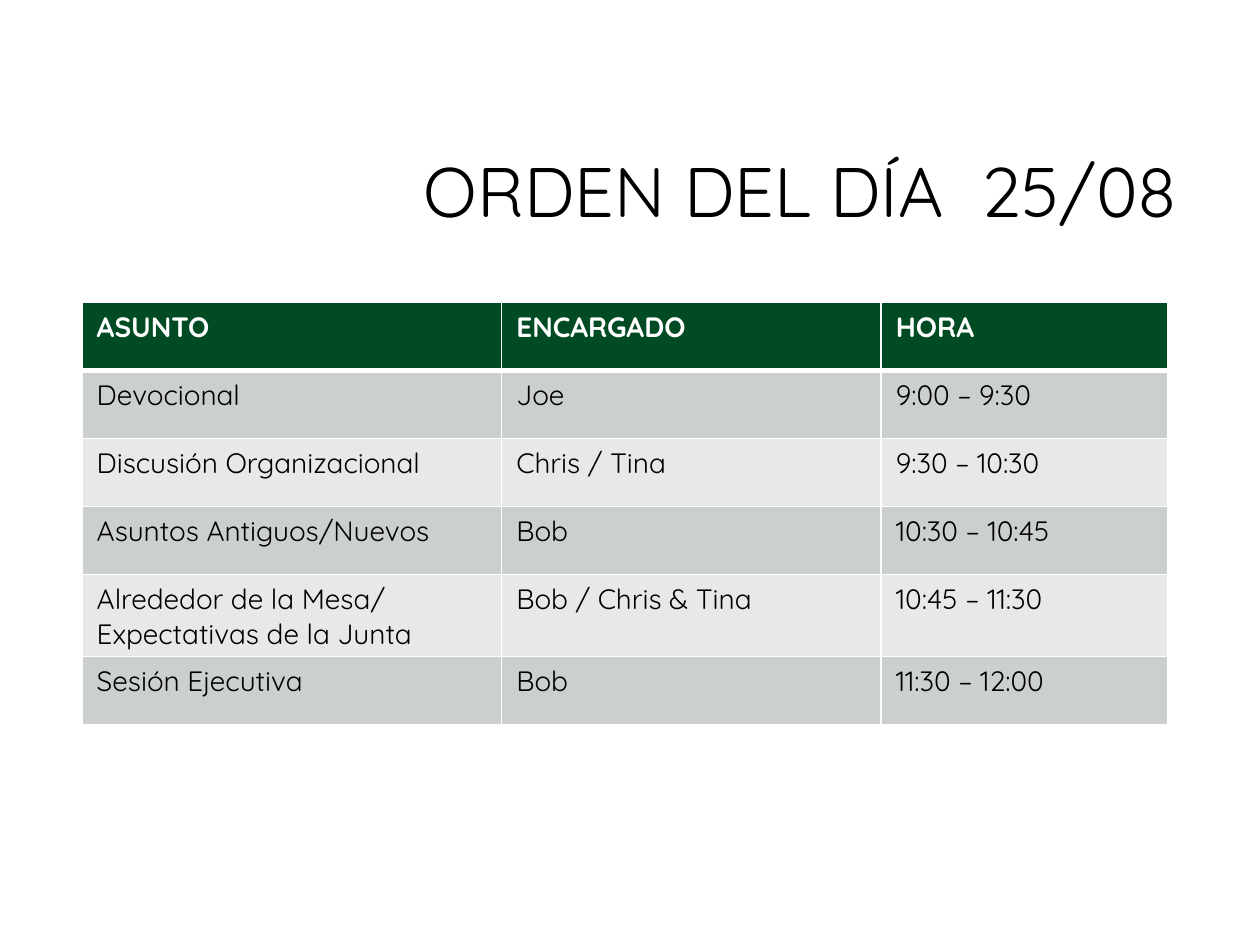
from dataclasses import dataclass

from lxml.etree import SubElement
from pptx import Presentation
from pptx.dml.color import RGBColor
from pptx.enum.text import MSO_ANCHOR as Anchor, PP_ALIGN as Align
from pptx.oxml.ns import qn
from pptx.slide import Slide
from pptx.table import _Cell as Cell
from pptx.text.text import _Paragraph as Paragraph
from pptx.util import Cm, Pt


@dataclass(frozen=True)
class Theme:
    font: str = "Quicksand"
    title_size: int = 40
    table_size: int = 16
    text: str = "000000"
    header_text: str = "FFFFFF"
    header_fill: str = "004B24"
    band_fills: tuple[str, str] = ("CCD0CD", "E7E9E8")
    border: str = "FFFFFF"
    thin_border: int = 1
    thick_border: int = 3


@dataclass(frozen=True)
class AgendaItem:
    topic: str
    leader: str
    time: str


THEME = Theme()
TITLE = "ORDEN DEL DÍA  25/08"
HEADER = AgendaItem("ASUNTO", "ENCARGADO", "HORA")
ITEMS = [
    AgendaItem("Devocional", "Joe", "9:00 – 9:30"),
    AgendaItem("Discusión Organizacional", "Chris / Tina", "9:30 – 10:30"),
    AgendaItem("Asuntos Antiguos/Nuevos", "Bob", "10:30 – 10:45"),
    AgendaItem("Alrededor de la Mesa/ Expectativas de la Junta",
               "Bob / Chris & Tina", "10:45 – 11:30"),
    AgendaItem("Sesión Ejecutiva", "Bob", "11:30 – 12:00"),
]
COLUMN_WIDTHS = (Cm(8.46), Cm(7.65), Cm(5.79))
ROW_HEIGHT = Cm(1.37)


def format_runs(paragraph: Paragraph, size: int, color: str, bold: bool = False) -> None:
    for run in paragraph.runs:
        run.font.name = THEME.font
        run.font.size = Pt(size)
        run.font.bold = bold
        run.font.color.rgb = RGBColor.from_string(color)


def set_borders(cell: Cell, top: int, bottom: int) -> None:
    """Give the cell solid borders; widths are in points."""
    properties = cell._tc.get_or_add_tcPr()
    widths = {"L": THEME.thin_border, "R": THEME.thin_border, "T": top, "B": bottom}
    for side, width in widths.items():
        line = SubElement(properties, qn(f"a:ln{side}"), w=str(Pt(width)))
        fill = SubElement(line, qn("a:solidFill"))
        SubElement(fill, qn("a:srgbClr"), val=THEME.border)


def add_title(slide: Slide, title: str) -> None:
    box = slide.shapes.add_textbox(Cm(6.05), Cm(2.13), Cm(17.93), Cm(3.58))
    text_frame = box.text_frame
    text_frame.word_wrap = True
    text_frame.vertical_anchor = Anchor.MIDDLE
    text_frame.text = title
    paragraph = text_frame.paragraphs[0]
    paragraph.alignment = Align.RIGHT
    paragraph.line_spacing = 0.9
    format_runs(paragraph, THEME.title_size, THEME.text)


def fill_cell(cell: Cell, text: str, row: int) -> None:
    is_header = row == 0
    set_borders(
        cell,
        top=THEME.thick_border if row == 1 else THEME.thin_border,
        bottom=THEME.thick_border if is_header else THEME.thin_border,
    )
    fill = THEME.header_fill if is_header else THEME.band_fills[(row - 1) % 2]
    cell.fill.solid()
    cell.fill.fore_color.rgb = RGBColor.from_string(fill)
    cell.margin_left = cell.margin_right = Cm(0.3)
    cell.margin_top = cell.margin_bottom = Cm(0.15)
    cell.text_frame.text = text
    color = THEME.header_text if is_header else THEME.text
    format_runs(cell.text_frame.paragraphs[0], THEME.table_size, color, bold=is_header)


def add_agenda(slide: Slide, header: AgendaItem, items: list[AgendaItem]) -> None:
    rows = [header, *items]
    table = slide.shapes.add_table(
        len(rows), len(COLUMN_WIDTHS), Cm(1.65), Cm(6.1),
        sum(COLUMN_WIDTHS), ROW_HEIGHT * len(rows),
    ).table
    for column, width in zip(table.columns, COLUMN_WIDTHS):
        column.width = width
    for row, item in enumerate(rows):
        for column, text in enumerate((item.topic, item.leader, item.time)):
            fill_cell(table.cell(row, column), text, row)


def main() -> None:
    presentation = Presentation()
    presentation.slide_width = Cm(25.4)
    presentation.slide_height = Cm(19.05)
    slide = presentation.slides.add_slide(presentation.slide_layouts[6])
    add_title(slide, TITLE)
    add_agenda(slide, HEADER, ITEMS)
    presentation.save("out.pptx")


if __name__ == "__main__":
    main()
